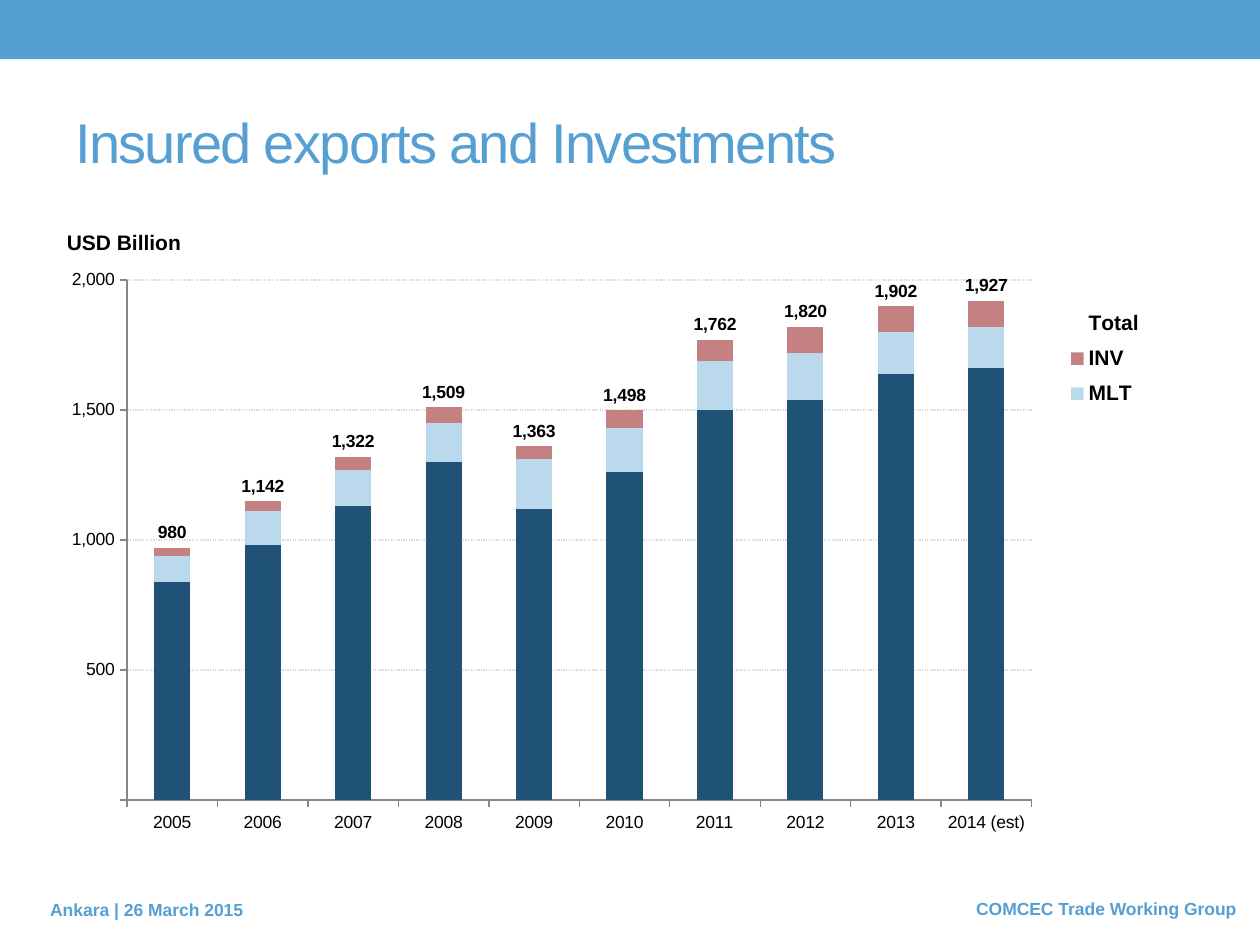
import pptx
import pptx.chart.data
import pptx.dml.color
import pptx.enum.chart
import pptx.enum.dml
import pptx.enum.shapes
import pptx.enum.text
import pptx.oxml
import pptx.oxml.ns
import pptx.util

Inches, Pt = pptx.util.Inches, pptx.util.Pt
Color = pptx.dml.color.RGBColor
Align = pptx.enum.text.PP_ALIGN
Enum = pptx.enum.chart

BLUE = Color(0x56, 0x9F, 0xD3)
NAVY = Color(0x1F, 0x52, 0x76)
PALE = Color(0xBB, 0xD9, 0xED)
ROSE = Color(0xC5, 0x81, 0x82)
GRID = Color(0xD9, 0xD9, 0xD9)
GRAY = Color(0x86, 0x86, 0x86)
BLACK = Color(0, 0, 0)

FORMAT = "#,###,"
YEARS = [str(year) for year in range(2005, 2014)] + ["2014 (est)"]
# Name, fill and values in thousands
SERIES = [
    ("Series 1", NAVY, [840, 980, 1130, 1300, 1120, 1260, 1500, 1540, 1640, 1660]),
    ("MLT ", PALE, [100, 130, 140, 150, 190, 170, 190, 180, 160, 160]),
    ("INV ", ROSE, [30, 40, 50, 60, 50, 70, 80, 100, 100, 100]),
    ("Total", None, [980, 1142, 1322, 1509, 1363, 1498, 1762, 1820, 1902, 1927]),
]


def assign(item, values):
    for name, value in values.items():
        setattr(item, name, value)


def chart_xml(tag, body):
    uri = pptx.oxml.ns.nsdecls("c")
    return pptx.oxml.parse_xml(f"<c:{tag} {uri}>{body}</c:{tag}>")


def place(parent, index, inner=False, **sizes):
    """Give a chart part a manual layout, in fractions of the chart."""
    for old in parent.findall(pptx.oxml.ns.qn("c:layout")):
        parent.remove(old)
    body = '<c:layoutTarget val="inner"/>' if inner else ""
    body += '<c:xMode val="edge"/><c:yMode val="edge"/>'
    body += "".join(f'<c:{key} val="{size}"/>' for key, size in sizes.items())
    parent.insert(index, chart_xml("layout", f"<c:manualLayout>{body}</c:manualLayout>"))


class Deck:
    """Holds the style and the current slide."""

    face = "Arial"

    def __init__(self, show):
        self.slide = show.slides.add_slide(show.slide_layouts[6])
        self.shapes = self.slide.shapes

    def style(self, font, size, color=BLACK, bold=False):
        assign(font, {"name": self.face, "size": Pt(size), "bold": bold})
        font.color.rgb = color

    def band(self, box, color):
        shape = self.shapes.add_shape(
            pptx.enum.shapes.MSO_SHAPE.RECTANGLE, *map(Inches, box))
        shape.shadow.inherit = False
        shape.fill.solid()
        shape.fill.fore_color.rgb = color
        shape.line.fill.background()

    def text(self, box, words, size, bold=False, align=Align.LEFT, space=0):
        frame = self.shapes.add_textbox(*map(Inches, box)).text_frame
        assign(frame, {"word_wrap": True,
                       "vertical_anchor": pptx.enum.text.MSO_ANCHOR.MIDDLE})
        line = frame.paragraphs[0]
        line.alignment = align
        run = line.add_run()
        run.text = words
        self.style(run.font, size, BLUE, bold)
        if space:
            run.font._element.set("spc", str(space * 100))

    def chart(self, box):
        data = pptx.chart.data.CategoryChartData()
        data.categories = YEARS
        for name, _, values in SERIES:
            data.add_series(name, [value * 1000 for value in values])
        chart = self.shapes.add_chart(
            Enum.XL_CHART_TYPE.COLUMN_STACKED, *map(Inches, box), data).chart
        chart.has_title = False
        self.style(chart.font, 12)
        area = chart._chartSpace.chart.plotArea
        place(area, 0, inner=True, x=0.055, y=0.098, w=0.777, h=0.839)
        self.bars(chart.plots[0])
        self.axes(chart)
        self.legend(chart)

    def bars(self, plot):
        assign(plot, {"gap_width": 150, "overlap": 100, "vary_by_categories": False})
        for series, (_, color, _) in zip(plot.series, SERIES):
            if color is not None:
                series.format.fill.solid()
                series.format.fill.fore_color.rgb = color
                continue
            series.format.fill.background()
            labels = series.data_labels
            assign(labels, {
                "show_value": True, "number_format": FORMAT,
                "number_format_is_linked": False,
                "position": Enum.XL_LABEL_POSITION.INSIDE_BASE})
            self.style(labels.font, 10, bold=True)

    def axes(self, chart):
        years, amounts = chart.category_axis, chart.value_axis
        for axis in (years, amounts):
            axis.major_tick_mark = Enum.XL_TICK_MARK.OUTSIDE
            axis.format.line.color.rgb = GRAY
            axis.format.line.width = Pt(0.75)
            self.style(axis.tick_labels.font, 10)
        assign(amounts, {"minimum_scale": 0, "maximum_scale": 2000000,
                         "major_unit": 500000, "has_major_gridlines": True})
        assign(amounts.tick_labels, {"number_format": FORMAT,
                                     "number_format_is_linked": False})
        grid = amounts.major_gridlines.format.line
        grid.color.rgb = GRID
        assign(grid, {"width": Pt(0.75),
                      "dash_style": pptx.enum.dml.MSO_LINE.ROUND_DOT})
        title = amounts.axis_title
        run = title.text_frame.paragraphs[0].add_run()
        run.text = "USD Billion"
        self.style(run.font, 12, bold=True)
        body = title.text_frame._txBody.bodyPr
        body.set("rot", "0")
        body.set("vert", "horz")
        place(title._element, 1, x=0, y=0.01)

    def legend(self, chart):
        chart.has_legend = True
        legend = chart.legend
        assign(legend, {"position": Enum.XL_LEGEND_POSITION.CORNER,
                        "include_in_layout": False})
        self.style(legend.font, 12, bold=True)
        hide = chart_xml("legendEntry", '<c:idx val="0"/><c:delete val="1"/>')
        legend._element.insert(1, hide)
        place(legend._element, 2, x=0.85, y=0.13, w=0.09, h=0.19)


def main():
    show = pptx.Presentation()
    assign(show, {"slide_width": Inches(10), "slide_height": Inches(7.5)})
    deck = Deck(show)
    deck.band((0, 0, 10, 0.47), BLUE)
    deck.text((0.5, 0.58, 9, 1.08), "Insured exports and Investments", 32, space=-1)
    deck.chart((0.5, 1.74, 9.24, 4.92))
    deck.text((0.3, 7.04, 3.17, 0.36), "Ankara | 26 March 2015", 10, bold=True)
    deck.text((4.16, 7.03, 5.75, 0.36), "COMCEC Trade Working Group", 10,
              bold=True, align=Align.RIGHT)
    show.save("out.pptx")


if __name__ == "__main__":
    main()
